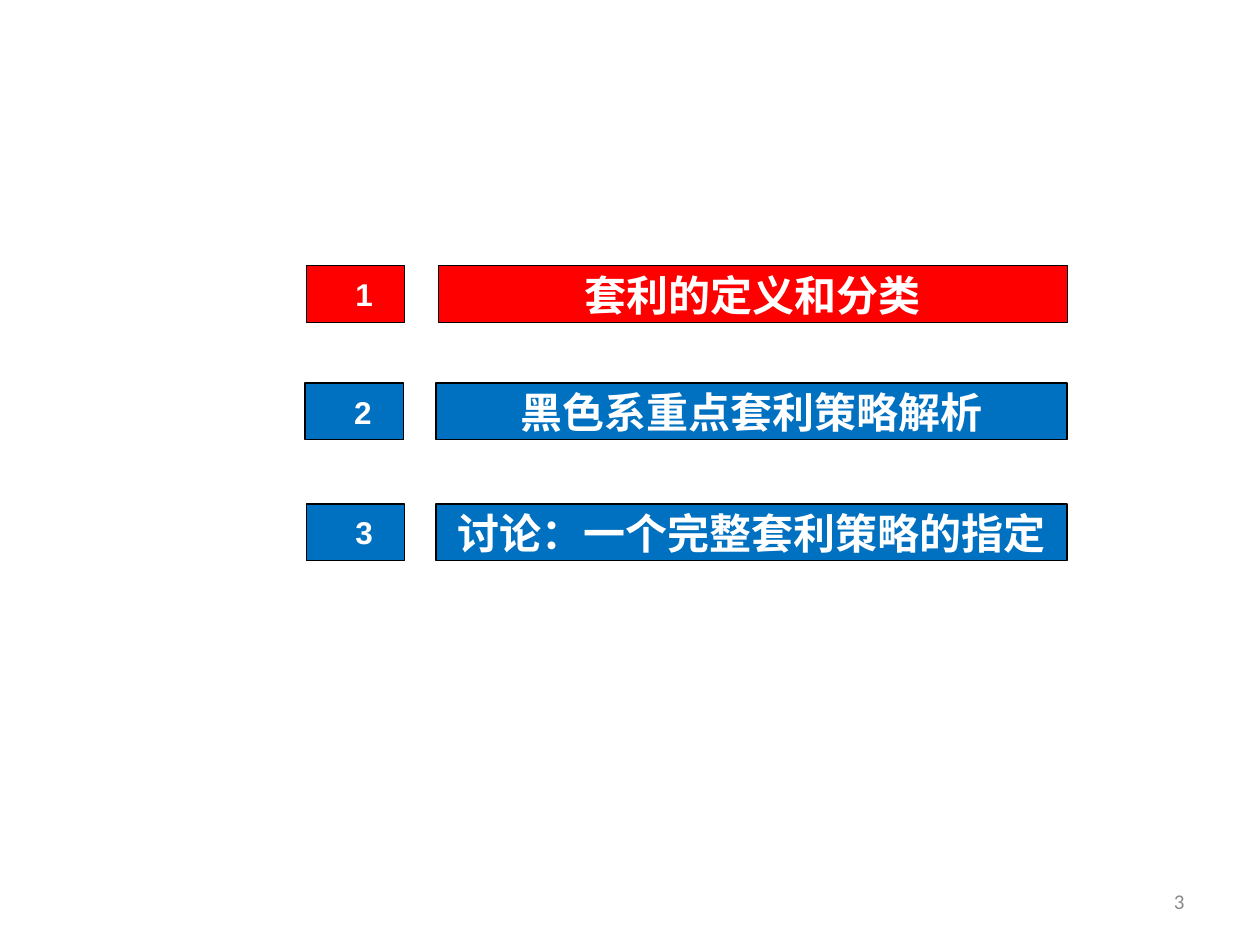
from pptx import Presentation
from pptx.dml.color import RGBColor
from pptx.enum.shapes import MSO_SHAPE
from pptx.enum.text import MSO_ANCHOR, PP_ALIGN
from pptx.util import Inches, Pt

COLORS = {"current": "FF0000", "other": "0070C0", "outline": "000000",
          "label": "FFFFFF", "page": "898989"}


def write(box, text, size, color, font="Arial", bold=True,
          align=PP_ALIGN.CENTER, left_inset=0.1):
    frame = box.text_frame
    frame.word_wrap = True
    frame.vertical_anchor = MSO_ANCHOR.MIDDLE
    frame.margin_left = Inches(left_inset)
    paragraph = frame.paragraphs[0]
    paragraph.alignment = align
    run = paragraph.add_run()
    run.text = text
    run.font.name = font
    run.font.size = Pt(size)
    run.font.bold = bold
    run.font.color.rgb = RGBColor.from_string(COLORS[color])


def add_bar(left, top, width, fill):
    bar = slide.shapes.add_shape(MSO_SHAPE.RECTANGLE, Inches(left), Inches(top),
                                 Inches(width), Inches(0.45))
    bar.shadow.inherit = False
    bar.fill.solid()
    bar.fill.fore_color.rgb = RGBColor.from_string(COLORS[fill])
    bar.line.color.rgb = RGBColor.from_string(COLORS["outline"])
    bar.line.width = Pt(0.75)
    return bar


prs = Presentation()
prs.slide_width, prs.slide_height = Inches(10), Inches(7.5)
slide = prs.slides.add_slide(prs.slide_layouts[6])

# Page number
page_number = slide.shapes.add_textbox(Inches(7.17), Inches(6.95),
                                       Inches(2.33), Inches(0.4))
write(page_number, "3", size=12, color="page", font="Calibri", bold=False,
      align=PP_ALIGN.RIGHT)

# Agenda: title, top, number left, title left, fill
agenda = [
    ("套利的定义和分类", 2.11, 2.43, 3.48, "current"),
    ("黑色系重点套利策略解析", 3.04, 2.42, 3.46, "other"),
    ("讨论：一个完整套利策略的指定", 4.0, 2.43, 3.46, "other"),
]
right_edge = 8.47
for number, (title, top, number_left, title_left, fill) in enumerate(agenda, 1):
    number_bar = add_bar(number_left, top, 0.78, fill)
    write(number_bar, str(number), size=18, color="label", left_inset=0.24)
    title_bar = add_bar(title_left, top, right_edge - title_left, fill)
    write(title_bar, title, size=24, color="label")

prs.save("out.pptx")
